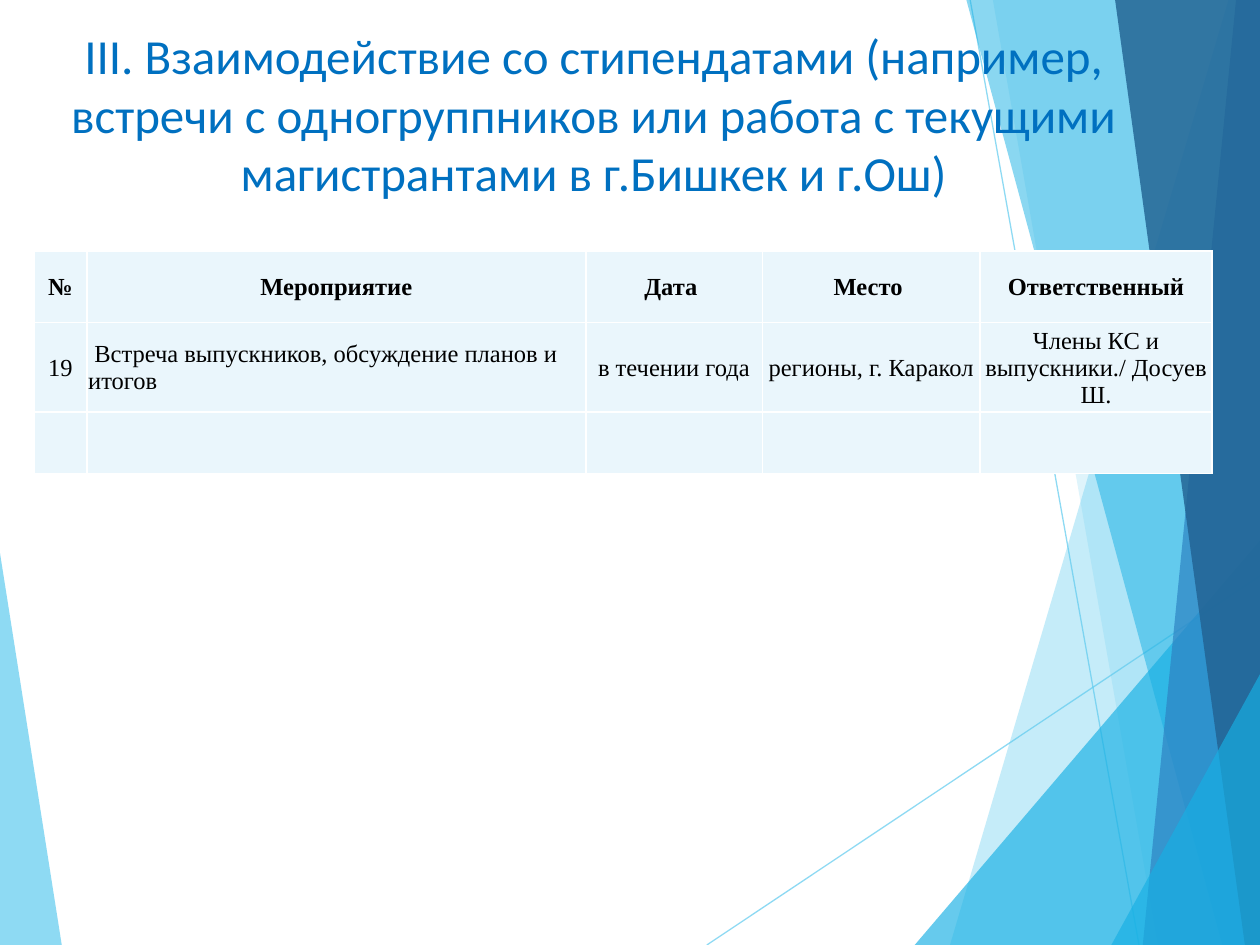
from lxml.etree import SubElement
from pptx import Presentation
from pptx.dml.color import RGBColor
from pptx.enum.shapes import MSO_CONNECTOR
from pptx.enum.text import MSO_ANCHOR, PP_ALIGN
from pptx.oxml.ns import qn
from pptx.util import Inches, Pt

SKY, CYAN, BLUE, NAVY = "5FCBEF", "17B0E4", "2E83C3", "226292"

# Outline points in inches, colour, opacity in percent
FACETS = [
    ([(0, 4.39), (0.49, 7.5), (0, 7.5)], SKY, 70),
    ([(9.75, 0), (7.54, 7.5), (10, 7.5), (10, 0)], SKY, 36),
    ([(7.88, 0), (9.19, 7.5), (10, 7.5), (10, 0)], SKY, 20),
    ([(7.26, 7.5), (10, 4.29), (10, 7.5)], CYAN, 66),
    ([(7.67, 0), (9.7, 7.5), (10, 7.5), (10, 0)], CYAN, 50),
    ([(9.81, 0), (9.07, 7.5), (10, 7.5), (10, 0)], BLUE, 70),
    ([(8.85, 0), (9.88, 7.5), (10, 7.5), (10, 0)], NAVY, 82),
    ([(8.82, 7.5), (10, 5.35), (10, 7.5)], CYAN, 66),
]
RAYS = [((5.61, 7.5), (10, 4.57)), ((7.7, 0), (9.04, 7.5))]

TITLE = ("III. Взаимодействие со стипендатами (например, встречи с одногруппников "
         "или работа с текущими магистрантами в г.Бишкек и г.Ош)")
COLUMN_WIDTHS = [0.42, 3.96, 1.4, 1.73, 1.84]
ROW_HEIGHTS = [0.57, 0.71, 0.49]
EVENTS = [
    ["№", "Мероприятие", "Дата ", "Место ", "Ответственный"],
    ["19", " Встреча выпускников, обсуждение планов и итогов", "в течении года",
     "регионы, г. Каракол", "Члены КС и выпускники./ Досуев Ш."],
    [""] * 5,
]


def color(code):
    return RGBColor.from_string(code)


def set_opacity(fill, percent):
    tint = fill._xPr.find(qn("a:solidFill"))[0]
    SubElement(tint, qn("a:alpha"), val=str(percent * 1000))


class SlideBuilder:
    title_font, title_size, title_color = "Calibri", 28, "0070C0"
    table_font, table_size, table_color = "Times New Roman", 14, "000000"
    cell_fill, border_color, border_width = "EAF6FC", "FFFFFF", 1
    ray_width, ray_opacity = 0.75, 70

    def __init__(self, page):
        self.page = page

    def facet(self, points, fill_color, opacity):
        outline = self.page.shapes.build_freeform(
            Inches(points[0][0]), Inches(points[0][1]))
        outline.add_line_segments([(Inches(x), Inches(y)) for x, y in points[1:]])
        shape = outline.convert_to_shape()
        shape.shadow.inherit = False
        shape.line.fill.background()
        shape.fill.solid()
        shape.fill.fore_color.rgb = color(fill_color)
        set_opacity(shape.fill, opacity)

    def ray(self, start, end):
        line = self.page.shapes.add_connector(
            MSO_CONNECTOR.STRAIGHT, *(Inches(value) for value in start + end))
        line.line.width = Pt(self.ray_width)
        line.line.color.rgb = color(SKY)
        set_opacity(line.line.fill, self.ray_opacity)
        SubElement(line._element.spPr, qn("a:effectLst"))

    def format_text(self, para, font, size, text_color, bold=False):
        for span in para.runs:
            span.font.name = font
            span.font.size = Pt(size)
            span.font.bold = bold
            span.font.color.rgb = color(text_color)

    def title(self, text, left, top, width, height):
        """Fill the title placeholder and bring it in front of the facets."""
        box = self.page.shapes.title
        self.page.shapes._spTree.append(box._element)
        box.left, box.top = Inches(left), Inches(top)
        box.width, box.height = Inches(width), Inches(height)
        frame = box.text_frame
        frame.text = text
        frame.word_wrap = True
        frame.vertical_anchor = MSO_ANCHOR.TOP
        para = frame.paragraphs[0]
        para.alignment = PP_ALIGN.CENTER
        self.format_text(para, self.title_font, self.title_size, self.title_color)

    def table(self, rows, left, top, widths, heights):
        grid = self.page.shapes.add_table(
            len(rows), len(widths), Inches(left), Inches(top),
            Inches(sum(widths)), Inches(sum(heights))).table
        for column, width in zip(grid.columns, widths):
            column.width = Inches(width)
        for row, height in zip(grid.rows, heights):
            row.height = Inches(height)
        for r, texts in enumerate(rows):
            for c, text in enumerate(texts):
                is_header = r == 0
                centered = is_header or c != 1
                self.cell(grid.cell(r, c), text, is_header, centered)

    def cell(self, cell, text, bold, centered):
        self.borders(cell)
        cell.fill.solid()
        cell.fill.fore_color.rgb = color(self.cell_fill)
        if not text:
            return
        cell.margin_left = cell.margin_right = cell.margin_top = Inches(0.01)
        cell.margin_bottom = 0
        cell.vertical_anchor = MSO_ANCHOR.MIDDLE
        cell.text_frame.text = text
        para = cell.text_frame.paragraphs[0]
        para.alignment = PP_ALIGN.CENTER if centered else PP_ALIGN.LEFT
        self.format_text(para, self.table_font, self.table_size, self.table_color, bold)

    def borders(self, cell):
        properties = cell._tc.get_or_add_tcPr()
        for side in ("lnL", "lnR", "lnT", "lnB"):
            edge = SubElement(properties, qn(f"a:{side}"), w=str(Pt(self.border_width)))
            fill = SubElement(edge, qn("a:solidFill"))
            SubElement(fill, qn("a:srgbClr"), val=self.border_color)


def main():
    deck = Presentation()
    deck.slide_width, deck.slide_height = Inches(10), Inches(7.5)
    title_only = deck.slide_layouts[5]
    builder = SlideBuilder(deck.slides.add_slide(title_only))

    for start, end in RAYS:
        builder.ray(start, end)
    for points, fill_color, opacity in FACETS:
        builder.facet(points, fill_color, opacity)
    builder.title(TITLE, 0.27, 0.15, 8.88, 1.63)
    builder.table(EVENTS, 0.27, 1.99, COLUMN_WIDTHS, ROW_HEIGHTS)

    deck.save("out.pptx")


if __name__ == "__main__":
    main()
